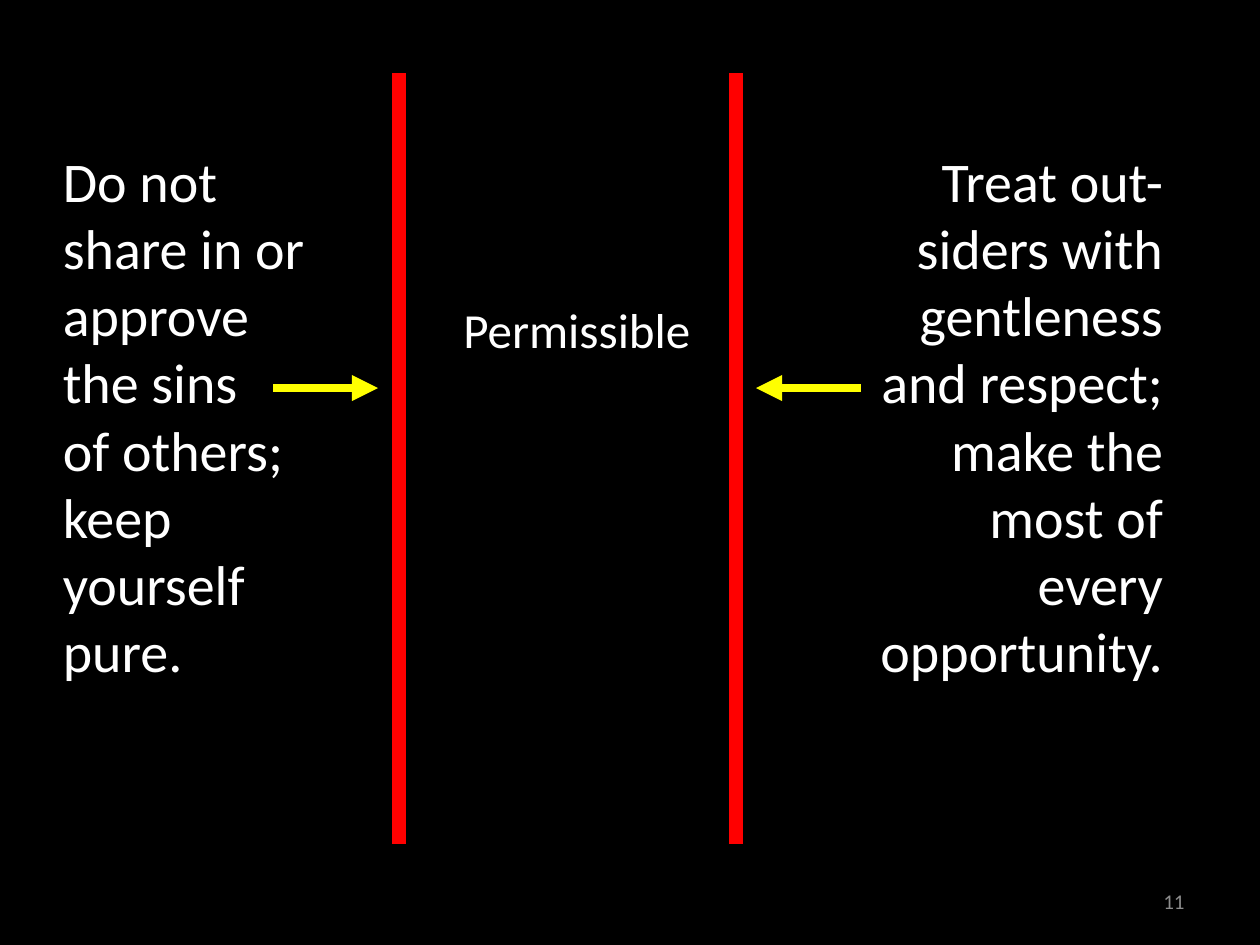
from lxml import etree
from pptx import Presentation
from pptx.dml.color import RGBColor
from pptx.enum.shapes import MSO_CONNECTOR
from pptx.enum.text import MSO_ANCHOR as Anchor, PP_ALIGN as Align
from pptx.oxml.ns import qn
from pptx.util import Inches, Pt

BLACK = RGBColor(0x00, 0x00, 0x00)
WHITE = RGBColor(0xFF, 0xFF, 0xFF)
GRAY = RGBColor(0x8C, 0x8C, 0x8C)
RED = RGBColor(0xFF, 0x00, 0x00)
YELLOW = RGBColor(0xFF, 0xFF, 0x00)

BODY_TOP_INSET = 0.76  # lowers the side texts within their tall boxes


def add_text(slide, text, box, size, color=WHITE, align=Align.LEFT, **frame_format):
    """Add a wrapped text box; frame_format sets text frame attributes."""
    frame = slide.shapes.add_textbox(*map(Inches, box)).text_frame
    for name, value in {"word_wrap": True, **frame_format}.items():
        setattr(frame, name, value)
    paragraph = frame.paragraphs[0]
    paragraph.text = text
    paragraph.alignment = align
    font_format = {"name": "Calibri", "size": Pt(size)}
    for run in paragraph.runs:
        for name, value in font_format.items():
            setattr(run.font, name, value)
        run.font.color.rgb = color


def add_line(slide, start, end, color, width, arrow=False):
    """Add a straight line, with an arrowhead at its end if asked."""
    connector = slide.shapes.add_connector(
        MSO_CONNECTOR.STRAIGHT, *map(Inches, (*start, *end)))
    connector.line.color.rgb = color
    connector.line.width = Pt(width)
    if arrow:
        etree.SubElement(connector.line._get_or_add_ln(), qn("a:tailEnd"), type="triangle")
    etree.SubElement(connector._element.spPr, qn("a:effectLst"))


def main():
    prs = Presentation()
    prs.slide_width, prs.slide_height = Inches(10), Inches(7.5)
    slide = prs.slides.add_slide(prs.slide_layouts[6])
    slide.background.fill.solid()
    slide.background.fill.fore_color.rgb = BLACK

    # Slide number and middle label
    add_text(slide, "11", (7.17, 6.95, 2.33, 0.4), 12, GRAY, Align.RIGHT,
             vertical_anchor=Anchor.MIDDLE)
    add_text(slide, "Permissible", (3.58, 2.33, 2.07, 0.88), 28)

    # Limits on either side
    limits = (
        ("Do not\nshare in or approve\nthe sins\nof others; keep yourself pure.",
         0.4, 2.17, Align.LEFT),
        ("Treat out-siders with gentleness and respect; "
         "make the most of every opportunity.", 6.83, 2.5, Align.RIGHT),
    )
    for text, left, width, align in limits:
        add_text(slide, text, (left, 0.4, width, 6.75), 32, align=align,
                 margin_top=Inches(BODY_TOP_INSET))

    # Arrows pointing inward
    for tail_x, tip_x in ((2.17, 3), (6.83, 6)):
        add_line(slide, (tail_x, 3.08), (tip_x, 3.08), YELLOW, 5, arrow=True)

    # Boundary lines
    for x in (3.17, 5.84):
        add_line(slide, (x, 0.58), (x, 6.7), RED, 8)

    prs.save("out.pptx")


if __name__ == "__main__":
    main()
